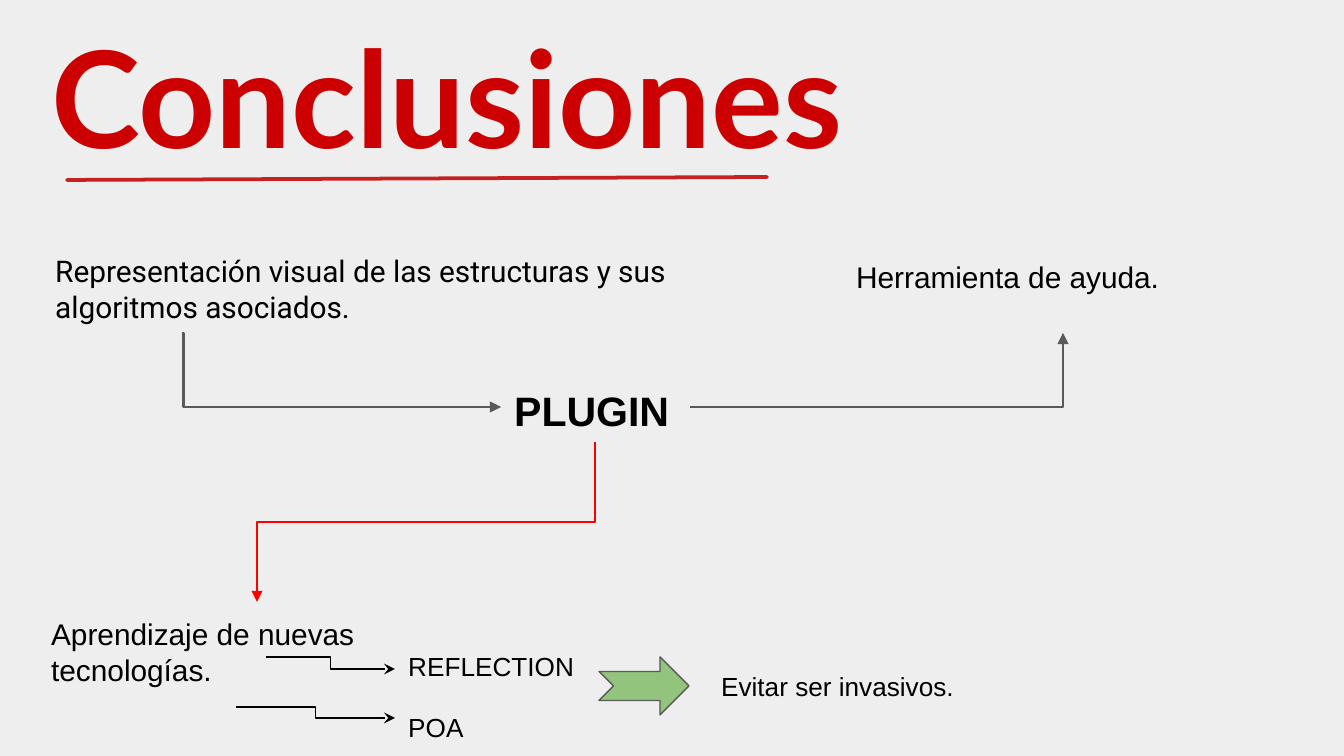
from lxml import etree
from pptx import Presentation
from pptx.dml.color import RGBColor
from pptx.enum.shapes import MSO_CONNECTOR, MSO_SHAPE
from pptx.enum.text import MSO_ANCHOR
from pptx.oxml.ns import qn
from pptx.util import Emu, Inches, Pt

ELBOW, STRAIGHT = MSO_CONNECTOR.ELBOW, MSO_CONNECTOR.STRAIGHT
NOTCHED_ARROW = MSO_SHAPE.NOTCHED_RIGHT_ARROW
TOP, MIDDLE = MSO_ANCHOR.TOP, MSO_ANCHOR.MIDDLE

EMU_PER_PX = 914400 / 134.4
SLIDE_SIZE = (1344, 756)
BACKGROUND, BLACK, GRAY, RED = "EEEEEE", "000000", "595959", "FF0000"

TEXTS = [
    ("Conclusiones", (38, 28, 1317, 134), "Lato", 72, "CC0000", True, MIDDLE),
    ("Representación visual de las estructuras y sus algoritmos asociados.",
     (42, 239, 753, 99), "Roboto", 16, BLACK, False, TOP),
    ("PLUGIN", (501, 372, 188, 70), "Arial", 22, BLACK, True, TOP),
    ("Aprendizaje de nuevas tecnologías.", (38, 602, 441, 89), "Arial", 16, BLACK, False, TOP),
    ("Herramienta de ayuda.", (843, 245, 441, 89), "Arial", 16, BLACK, False, TOP),
    ("POA", (395, 698, 90, 40), "Arial", 14, BLACK, False, TOP),
    ("REFLECTION", (395, 637, 228, 40), "Arial", 14, BLACK, False, TOP),
    ("Evitar ser invasivos.", (708, 657, 269, 58), "Arial", 14, BLACK, False, TOP),
]
UNDERLINE = ((67, 180), (767, 177), "C00000", 2)
DOWN_LINK = ((595, 442), (257, 602), RED, 1.5, "triangle")
INPUT_LINK = ((182, 333), (501, 407), GRAY, 1.5, "triangle")
OUTPUT_LINK = ((690, 407), (1063, 333), GRAY, 1.5, "triangle")
DETAIL_LINKS = [
    ((236, 707), (395, 718), BLACK, 0.75, "stealth"),
    ((266, 657), (395, 669), BLACK, 0.75, "stealth"),
]
RESULT_ARROW = (599, 657, 90, 58)


def px(length):
    return Emu(round(length * EMU_PER_PX))


def color(hex_code):
    return RGBColor.from_string(hex_code)


def add_text(slide, wording, box, font_name, size, ink, bold, anchor):
    frame = slide.shapes.add_textbox(*map(px, box)).text_frame
    frame.word_wrap = True
    frame.vertical_anchor = anchor
    frame.margin_left = frame.margin_right = Inches(0.1)
    frame.margin_top = frame.margin_bottom = Inches(0.1)
    run = frame.paragraphs[0].add_run()
    run.text = wording
    run.font.name = font_name
    run.font.size = Pt(size)
    run.font.bold = bold
    run.font.color.rgb = color(ink)


def add_link(slide, start, end, ink, width, head=None, kind=ELBOW, turned=False):
    (x1, y1), (x2, y2) = start, end
    if turned:
        center_x, center_y = (x1 + x2) / 2, (y1 + y2) / 2
        half_x, half_y = (y2 - y1) / 2, (x1 - x2) / 2
        x1, x2 = center_x - half_x, center_x + half_x
        y1, y2 = center_y - half_y, center_y + half_y
    link = slide.shapes.add_connector(kind, px(x1), px(y1), px(x2), px(y2))
    link.line.color.rgb = color(ink)
    link.line.width = Pt(width)
    properties = link._element.spPr
    if turned:
        properties.find(qn("a:xfrm")).set("rot", "5400000")
    if head:
        etree.SubElement(properties.find(qn("a:ln")), qn("a:tailEnd"), type=head, w="med", len="med")
    etree.SubElement(properties, qn("a:effectLst"))
    return properties


def main():
    """Build the conclusions slide and save it."""
    deck = Presentation()
    deck.slide_width, deck.slide_height = map(px, SLIDE_SIZE)
    slide = deck.slides.add_slide(deck.slide_layouts[6])
    slide.background.fill.solid()
    slide.background.fill.fore_color.rgb = color(BACKGROUND)

    for text in TEXTS:
        add_text(slide, *text)

    underline = add_link(slide, *UNDERLINE, kind=STRAIGHT)
    stroke = underline.find(qn("a:ln"))
    stroke.set("cap", "rnd")
    etree.SubElement(next(stroke.iter(qn("a:srgbClr"))), qn("a:alpha"), val="85000")

    add_link(slide, *DOWN_LINK, turned=True)
    bend = add_link(slide, *INPUT_LINK).find(qn("a:prstGeom"))
    adjustments = bend.find(qn("a:avLst"))
    etree.SubElement(adjustments, qn("a:gd"), name="adj1", fmla="val 500")
    add_link(slide, *OUTPUT_LINK).find(qn("a:prstGeom")).set("prst", "bentConnector2")
    for detail in DETAIL_LINKS:
        add_link(slide, *detail)

    arrow = slide.shapes.add_shape(NOTCHED_ARROW, *map(px, RESULT_ARROW))
    arrow.shadow.inherit = False
    arrow.fill.solid()
    arrow.fill.fore_color.rgb = color("93C47D")
    arrow.line.color.rgb = color(GRAY)
    arrow.line.width = Pt(0.75)

    deck.save("out.pptx")


if __name__ == "__main__":
    main()
